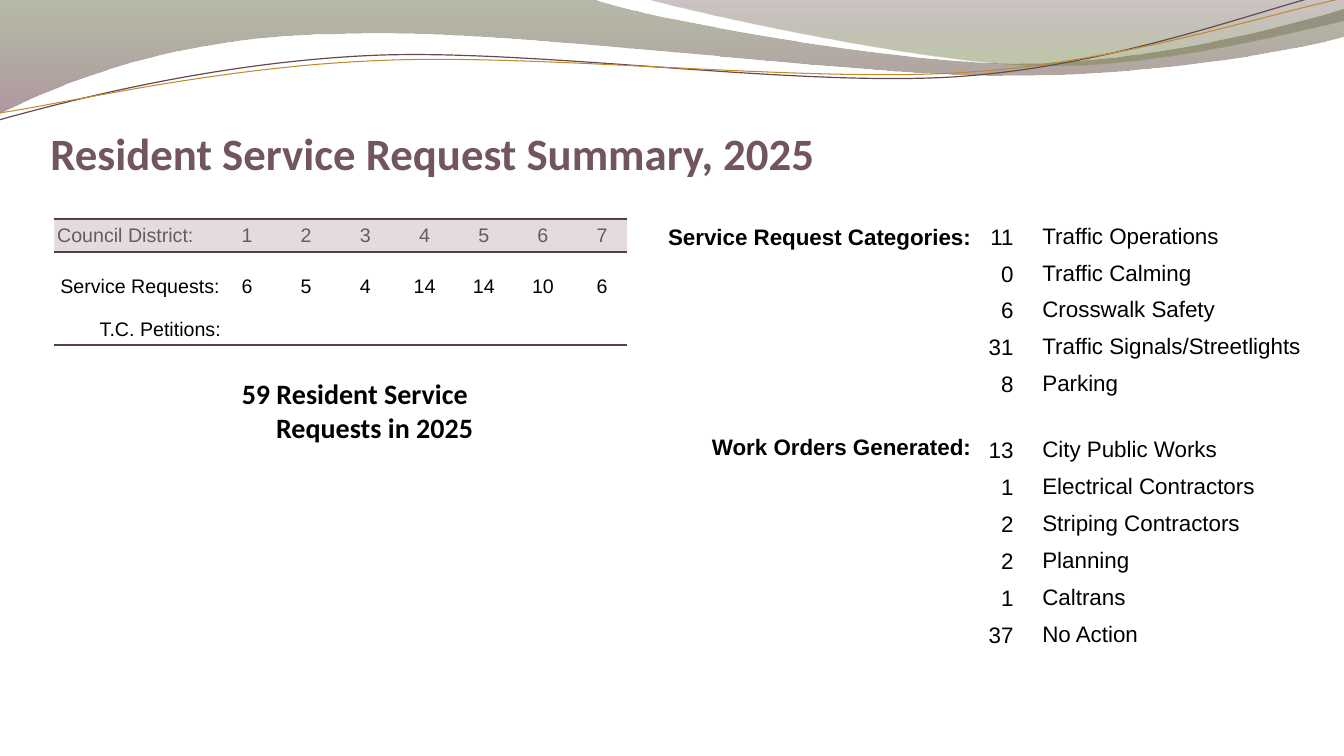
from math import cos, radians, sin

from lxml import etree
from pptx import Presentation
from pptx.dml.color import RGBColor
from pptx.enum.shapes import MSO_CONNECTOR, MSO_SHAPE
from pptx.enum.text import MSO_ANCHOR, PP_ALIGN
from pptx.oxml.ns import qn
from pptx.util import Inches, Pt

LEFT, MID, RIGHT = PP_ALIGN.LEFT, PP_ALIGN.CENTER, PP_ALIGN.RIGHT
TOP, BOTTOM = MSO_ANCHOR.TOP, MSO_ANCHOR.BOTTOM
STRAIGHT, RECT = MSO_CONNECTOR.STRAIGHT, MSO_SHAPE.RECTANGLE

THEME = {
    "sans": "Arial", "head": "Calibri",
    "ink": "000000", "title": "72555D", "rule": "564046", "band": "CAB8BD",
    "big": 32, "note": 20, "list": 16, "grid": 14, "thin": 1.25,
}

TITLE = "Resident Service Request Summary, 2025"
TOTAL = ["59 Resident Service", "Requests in 2025"]
HEADS = ("Council District:", ["1", "2", "3", "4", "5", "6", "7"])
COUNTS = ("Service Requests:", ["6", "5", "4", "14", "14", "10", "6"])
PETITIONS = "T.C. Petitions:"
GROUPS = [
    ("Service Request Categories:", 6.49, 3.24, 2.16, 2.15, 2.81, [
        ("11", "Traffic Operations"), ("0", "Traffic Calming"),
        ("6", "Crosswalk Safety"), ("31", "Traffic Signals/Streetlights"),
        ("8", "Parking")]),
    ("Work Orders Generated:", 6.92, 2.81, 4.25, 4.27, 2.33, [
        ("13", "City Public Works"), ("1", "Electrical Contractors"),
        ("2", "Striping Contractors"), ("2", "Planning"),
        ("1", "Caltrans"), ("37", "No Action")]),
]

WAVES = [
    ([(0, -0.01), (5.87, -0.01), (6.34, 0.17, 8.85, 0.63, 10.11, 0.63),
      (11.38, 0.63, 12.78, 0.26, 13.33, 0.09), (13.35, 0.36),
      (13.11, 0.44, 11.6, 0.76, 9.94, 0.75),
      (8.29, 0.75, 5.09, 0.28, 3.43, 0.34),
      (1.72, 0.35, 0.61, 0.83, -0.01, 1.13)],
     [(0, "5E663D", 45), (100, "6E4450", 55)]),
    ([(6.39, -0.01), (6.79, 0.11, 9.09, 0.62, 10.25, 0.65),
      (11.41, 0.69, 12.82, 0.32, 13.33, 0.21), (13.33, 0)],
     [(0, "563A41", 30), (80, "738045", 45), (100, "738045", 45)]),
]
TILT = 2.7
STRANDS = [
    ([(-0.01, 1.19), (0.64, 1.01, 2.11, 0.62, 3.69, 0.55),
      (5.27, 0.48, 7.9, 0.87, 9.5, 0.76),
      (11.1, 0.65, 12.52, 0.08, 13.31, -0.1)], (6.65, 0.58), "644A51", 0.85),
    ([(0, 1.12), (0.63, 1.03, 2.18, 0.66, 3.78, 0.6),
      (5.37, 0.53, 7.96, 0.82, 9.55, 0.72),
      (11.15, 0.62, 12.55, 0.14, 13.34, -0.02)], (6.67, 0.59), "C1882C", 0.75),
]

deck = Presentation()
deck.slide_width, deck.slide_height = Inches(13.33), Inches(7.5)
slide = deck.slides.add_slide(deck.slide_layouts[6])
shapes = slide.shapes


def color(name):
    return RGBColor.from_string(THEME.get(name, name))


def fade(node, part):
    etree.SubElement(node, qn("a:alpha")).set("val", str(part * 1000))


def pairs_of(step):
    return list(zip(step[::2], step[1::2]))


def curve(steps, close):
    points = [(Inches(x), Inches(y)) for step in steps
              for x, y in pairs_of(step)]
    form = shapes.build_freeform(*points[0], scale=1.0)
    form.add_line_segments(points[1:], close=close)
    shape = form.convert_to_shape()
    lines = iter(list(shape.element.spPr.iter(qn("a:lnTo"))))
    for step in steps[1:]:
        first = next(lines)
        if len(step) == 6:
            first.tag = qn("a:cubicBezTo")
            for _ in range(2):
                line = next(lines)
                first.append(line[0])
                line.getparent().remove(line)
    shape.shadow.inherit = False
    shape.fill.background()
    return shape


def wave(steps, stops):
    shape = curve(steps, True)
    shape.line.fill.background()
    props = shape.element.spPr
    grad = etree.Element(qn("a:gradFill"))
    items = etree.SubElement(grad, qn("a:gsLst"))
    for pos, tint, part in stops:
        stop = etree.SubElement(items, qn("a:gs"), pos=str(pos * 1000))
        fade(etree.SubElement(stop, qn("a:srgbClr"), val=tint), part)
    etree.SubElement(grad, qn("a:lin"), ang="5400000", scaled="0")
    props.replace(props.find(qn("a:noFill")), grad)


def strand(steps, hub, tint, width):
    a, b = hub
    c, s = cos(radians(TILT)), sin(radians(TILT))
    level = []
    for step in steps:
        flat = ()
        for x, y in pairs_of(step):
            flat += (a + (x - a) * c - (y - b) * s,
                     b + (x - a) * s + (y - b) * c)
        level.append(flat)
    shape = curve(level, False)
    shape.rotation = 360 - TILT
    shape.line.color.rgb = color(tint)
    shape.line.width = Pt(width)


def text(lines, x, y, w, h, size="grid", align=LEFT, bold=False, font="sans",
         tint="ink", gap=0, anchor=TOP, wrap=False):
    frame = shapes.add_textbox(*map(Inches, (x, y, w, h))).text_frame
    frame.word_wrap = wrap
    frame.vertical_anchor = anchor
    for i, line in enumerate(lines):
        para = frame.add_paragraph() if i else frame.paragraphs[0]
        para.alignment = align
        if i < len(lines) - 1:
            para.space_after = Pt(gap)
        run = para.add_run()
        run.text = line
        run.font.name = THEME[font]
        run.font.size = Pt(THEME[size])
        run.font.bold = bold
        run.font.color.rgb = color(tint)
    return frame


def row(values, y):
    for i, value in enumerate(values):
        w = 0.2 + 0.11 * len(value)
        text([value], 2.45 + 0.587 * i - w / 2, y, w, 0.34, align=MID)


def rule(y):
    line = shapes.add_connector(STRAIGHT, *map(Inches, (0.54, y, 6.22, y)))
    line.line.color.rgb = color("rule")
    line.line.width = Pt(THEME["thin"])
    etree.SubElement(line.element.spPr, qn("a:effectLst"))


for steps, stops in WAVES:
    wave(steps, stops)
for steps, hub, tint, width in STRANDS:
    strand(steps, hub, tint, width)

title = text([TITLE], 0, 1.19, 13.33, 0.59, "big", bold=True, font="head",
             tint="title", anchor=BOTTOM, wrap=True)
title.margin_left, title.margin_right = Inches(0.5), 0
title.margin_bottom = 0

text([HEADS[0]], 0.46, 2.16, 1.56, 0.34, align=RIGHT)
row(HEADS[1], 2.16)
band = shapes.add_shape(RECT, *map(Inches, (0.54, 2.16, 5.68, 0.34)))
band.shadow.inherit = False
band.fill.solid()
band.fill.fore_color.rgb = color("band")
band.line.fill.background()
fade(band.element.spPr.find(".//" + qn("a:srgbClr")), 50)
text([COUNTS[0]], 0.5, 2.67, 1.79, 0.34)
row(COUNTS[1], 2.67)
text([PETITIONS], 0.8, 3.09, 1.49, 0.34, align=RIGHT)
for y in (2.17, 2.5, 3.42):
    rule(y)

for label, left, wide, top, names, span, pairs in GROUPS:
    high = 0.37 * len(pairs)
    text([label], left, top, wide, 0.37, "list", RIGHT, True)
    text([name for _, name in pairs], 10.24, names, span, high, "list", gap=7.2)
    text([num for num, _ in pairs], 9.7, names + 0.01, 0.45, high, "list",
         RIGHT, gap=7.2)

total = text(TOTAL, 2.3, 3.69, 2.54, 0.77, "note", bold=True, font="head")
total.paragraphs[1]._p.get_or_add_pPr().set("marL", str(Inches(0.34)))

deck.save("out.pptx")
